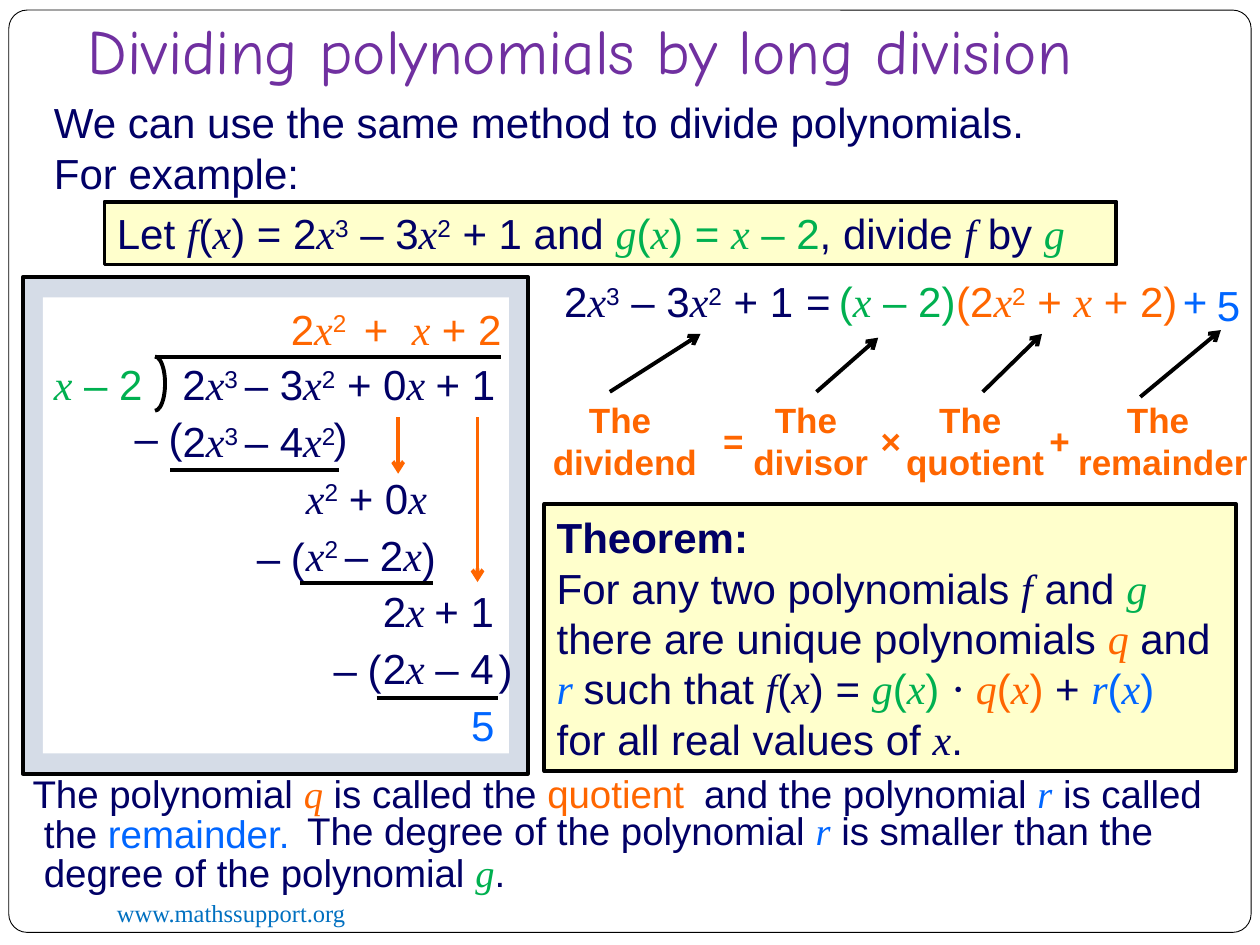
import pptx
import pptx.dml.color
import pptx.enum.shapes
import pptx.enum.text
import pptx.oxml
import pptx.util
from pptx.util import Inches

RGBColor = pptx.dml.color.RGBColor
SHAPES = pptx.enum.shapes.MSO_SHAPE
ALIGN = pptx.enum.text.PP_ALIGN

BLACK = RGBColor(0x00, 0x00, 0x00)
WHITE = RGBColor(0xFF, 0xFF, 0xFF)
NAVY = RGBColor(0x01, 0x00, 0x66)
GREEN = RGBColor(0x00, 0xB0, 0x50)
ORANGE = RGBColor(0xFF, 0x66, 0x00)
BLUE = RGBColor(0x00, 0x66, 0xFF)
PURPLE = RGBColor(0x70, 0x30, 0xA0)
LINK_BLUE = RGBColor(0x00, 0x70, 0xC0)
CREAM = RGBColor(0xFF, 0xFF, 0xCC)
PALE_BLUE = RGBColor(0xD5, 0xDC, 0xE7)

INK = {"n": NAVY, "g": GREEN, "o": ORANGE, "b": BLUE}
MARKS = "*^~\n"


def write(para, markup, size, color, font="Arial"):
    """Fill a paragraph: * toggles maths italics, ^ a superscript, ~ plus a letter sets the ink."""
    para.font.size = pptx.util.Pt(size)
    para.font.name = font
    para.font.color.rgb = color
    italic = raised = False
    ink = color
    position = 0
    while position < len(markup):
        mark = markup[position]
        if mark in MARKS:
            position += 1
            if mark == "*":
                italic = not italic
            elif mark == "^":
                raised = not raised
            elif mark == "~":
                ink = INK[markup[position]]
                position += 1
            else:
                para.add_line_break()
            continue
        end = position
        while end < len(markup) and markup[end] not in MARKS:
            end += 1
        span = para.add_run()
        span.text = markup[position:end]
        span.font.size = pptx.util.Pt(size)
        if italic:
            span.font.name = "Times New Roman"
            span.font.italic = True
        if raised:
            span.font._element.set("baseline", "30000")
        if ink != color:
            span.font.color.rgb = ink
        position = end


def fill_text(shape, paragraphs, size=24, color=NAVY, align=ALIGN.LEFT, font="Arial"):
    frame = shape.text_frame
    frame.word_wrap = True
    for index, markup in enumerate(paragraphs):
        para = frame.add_paragraph() if index else frame.paragraphs[0]
        para.alignment = align
        write(para, markup, size, color, font)
    return frame


def add_text(page, left, top, width, height, *paragraphs, bold=None, **style):
    """Add a text box whose right inset is given up, so that tight terms stay on one line."""
    box = page.shapes.add_textbox(Inches(left), Inches(top), Inches(width), Inches(height))
    frame = fill_text(box, paragraphs, **style)
    frame.margin_right = 0
    for para in frame.paragraphs:
        para.font.bold = bold
    return frame


def add_panel(page, left, top, width, height, fill=None, line=2.25, kind=SHAPES.RECTANGLE):
    panel = page.shapes.add_shape(kind, Inches(left), Inches(top), Inches(width), Inches(height))
    panel.shadow.inherit = False
    if fill is None:
        panel.fill.background()
    else:
        panel.fill.solid()
        panel.fill.fore_color.rgb = fill
    if line:
        panel.line.color.rgb = BLACK
        panel.line.width = pptx.util.Pt(line)
    else:
        panel.line.fill.background()
    return panel


def add_line(page, start, end, color=BLACK, arrow=False):
    line = page.shapes.add_connector(
        pptx.enum.shapes.MSO_CONNECTOR.STRAIGHT, *map(Inches, start + end))
    line.line.color.rgb = color
    line.line.width = pptx.util.Pt(2.25)
    if arrow:
        head = pptx.oxml.parse_xml(
            '<a:tailEnd xmlns:a="http://schemas.openxmlformats.org/drawingml/2006/main" type="arrow"/>')
        line.line._get_or_add_ln().append(head)
    line._element.spPr.append(pptx.oxml.parse_xml(
        '<a:effectLst xmlns:a="http://schemas.openxmlformats.org/drawingml/2006/main"/>'))


def add_frame_and_heading(page):
    border = add_panel(page, 0.07, 0.08, 9.86, 7.32, WHITE, 0.5, SHAPES.ROUNDED_RECTANGLE)
    border.adjustments[0] = 0.02
    add_text(page, 0.83, 7.08, 3.25, 0.34, "www.mathssupport.org",
             size=14, color=LINK_BLUE, font="Times New Roman")
    title = add_text(page, 0.6, 0.21, 8.74, 0.58, "Dividing polynomials by long division",
                     size=36, color=PURPLE, font="Comic Neue")
    title.vertical_anchor = pptx.enum.text.MSO_ANCHOR.BOTTOM
    title.margin_bottom = Inches(0.1)
    add_text(page, 0.33, 0.72, 9.59, 0.9,
             "We can use the same method to divide polynomials.", "For example:")
    task = add_panel(page, 0.83, 1.6, 8.03, 0.5, CREAM)
    fill_text(task, ["Let *f*(*x*) = 2*x*^3^ – 3*x*^2^ + 1 and ~g*g*(*x*) = *x* – 2"
                     "~n, divide *f* by ~g*g*"])


def add_long_division(page):
    add_panel(page, 0.18, 2.2, 4.01, 3.94, PALE_BLUE)
    add_panel(page, 0.34, 2.36, 3.7, 3.62, WHITE, line=0)
    bracket = add_panel(page, 1.23, 2.83, 0.08, 0.43, kind=SHAPES.RIGHT_BRACKET)
    bracket.adjustments[0] = 2.71

    for left, width, term in [(2.21, 0.66, "2*x*^2^"), (2.79, 0.4, "+"),
                              (3.17, 0.35, "*x*"), (3.41, 0.67, "+ 2")]:
        add_text(page, left, 2.36, width, 0.5, term, color=ORANGE)
    add_text(page, 0.33, 2.8, 0.9, 0.5, "*x* – 2", color=GREEN)

    first_row, row_step = 2.8, 0.45
    for row, left, width, term in [
            (0, 1.35, 2.73, "2*x*^3 ^– 3*x*^2^ + 0*x *+ 1"),
            (1, 1.35, 1.45, "2*x*^3 ^– 4*x*^2^"),
            (2, 2.33, 0.47, "*x*^2^"), (2, 2.67, 0.82, "+ 0*x*"),
            (3, 2.33, 1.15, "*x*^2 ^– 2*x*"),
            (4, 2.94, 0.53, "2*x*"), (4, 3.35, 0.67, "+ 1"),
            (5, 2.94, 1.08, "2*x *– 4"),
            (6, 3.64, 0.39, "~b5")]:
        add_text(page, left, first_row + row * row_step, width, 0.5, term)

    for top, minus, opening, closing in [(3.22, 0.97, 1.24, 2.55),
                                         (4.17, 1.94, 2.21, 3.25),
                                         (5.06, 2.55, 2.82, 3.86)]:
        add_text(page, minus, top, 0.39, 0.5, "–")
        add_text(page, opening, top, 0.31, 0.5, "(")
        add_text(page, closing, top, 0.31, 0.5, ")")

    for left, right, height in [(1.23, 3.98, 2.83), (1.35, 2.69, 3.73),
                                (2.38, 3.44, 4.63), (2.99, 3.95, 5.54)]:
        add_line(page, (left, height), (right, height))
    for across, bottom in [(3.16, 3.76), (3.79, 4.62)]:
        add_line(page, (across, 3.31), (across, bottom), ORANGE, arrow=True)


def add_identity(page):
    """The worked identity, with each part named below it."""
    for left, top, width, term in [
            (4.38, 2.14, 2.07, "2*x*^3^ – 3*x*^2^ + 1"), (6.3, 2.14, 0.4, "="),
            (6.56, 2.14, 1.14, "~g(*x* – 2)"),
            (7.49, 2.14, 1.99, "~o(2*x*^2^ + *x* + 2)"),
            (9.29, 2.14, 0.4, "~b+"), (9.56, 2.17, 0.39, "~b5")]:
        add_text(page, left, top, width, 0.5, term)
    for left, width, name in [(4.29, 1.34, "dividend"), (5.88, 1.11, "divisor"),
                              (7.09, 1.3, "quotient"), (8.46, 1.54, "remainder")]:
        label = add_text(page, left, 3.11, width, 0.77, "The ", name, bold=True,
                         size=20, color=ORANGE, align=ALIGN.CENTER)
        label.margin_left = 0
    for left, sign in [(5.64, "="), (6.89, "×"), (8.23, "+")]:
        add_text(page, left, 3.28, 0.36, 0.43, sign, bold=True, size=20, color=ORANGE)
    for start, end in [((4.84, 3.11), (5.56, 2.65)), ((6.48, 3.11), (6.97, 2.68)),
                       ((7.8, 3.11), (8.27, 2.65)), ((9.05, 3.15), (9.69, 2.62))]:
        add_line(page, start, end, arrow=True)


def add_theorem(page):
    panel = add_panel(page, 4.32, 4, 5.49, 2.12, CREAM)
    frame = fill_text(panel, [
        "Theorem:",
        "For any two polynomials *f* and ~g*g *~nthere are unique polynomials ~o*q*~n and "
        "~b*r *~nsuch that *f*(*x*) = ~g*g*(*x*) ~n*⋅ ~oq*(*x*) ~n+ ~b*r*(*x*)\n"
        "~nfor all real values of *x*."])
    frame.paragraphs[0].font.bold = True


def add_conclusion(page):
    for left, top, width, markup in [
            (0.16, 6.06, 5.49, "The polynomial ~o*q*~n is called the ~oquotient"),
            (5.49, 6.06, 4.25, "and the polynomial ~b*r*~n is called"),
            (0.25, 6.38, 2.18, "the ~bremainder."),
            (2.34, 6.36, 7.14, "The degree of the polynomial ~b*r*~n is smaller than the"),
            (0.25, 6.69, 4.75, "degree of the polynomial ~g*g*~n.")]:
        add_text(page, left, top, width, 0.47, markup, size=22)


def main():
    deck = pptx.Presentation()
    deck.slide_width, deck.slide_height = Inches(10), Inches(7.5)
    page = deck.slides.add_slide(deck.slide_layouts[6])
    add_frame_and_heading(page)
    add_long_division(page)
    add_identity(page)
    add_theorem(page)
    add_conclusion(page)
    deck.save("out.pptx")


if __name__ == "__main__":
    main()
